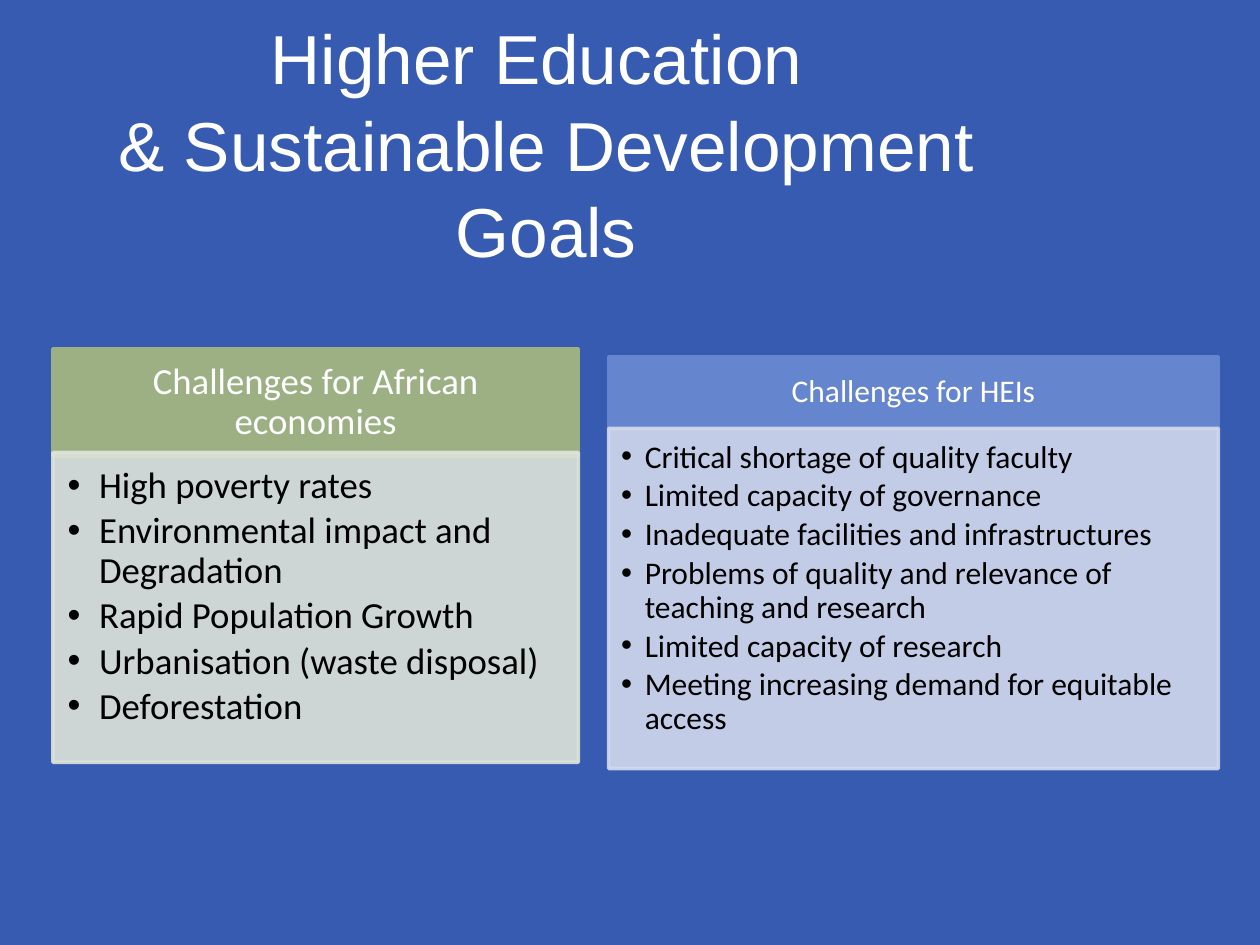
from lxml import etree
from pptx import Presentation
from pptx.dml.color import RGBColor
from pptx.enum.text import MSO_ANCHOR, MSO_AUTO_SIZE, PP_ALIGN
from pptx.oxml.ns import qn
from pptx.util import Inches, Pt

BLUE = RGBColor(0x37, 0x5B, 0xB0)
WHITE = RGBColor(0xFF, 0xFF, 0xFF)
BLACK = RGBColor(0x00, 0x00, 0x00)
GREEN = RGBColor(0x9C, 0xB0, 0x84)
PALE_GREEN = RGBColor(0xDE, 0xE4, 0xD9)
LIGHT_BLUE = RGBColor(0x65, 0x85, 0xCF)
PALE_BLUE = RGBColor(0xD3, 0xD9, 0xED)
CENTER = PP_ALIGN.CENTER
LEFT = PP_ALIGN.LEFT
MIDDLE = MSO_ANCHOR.MIDDLE
TOP = MSO_ANCHOR.TOP
NO_AUTOFIT = MSO_AUTO_SIZE.NONE
COMPARISON_LAYOUT = 4


class ComparisonSlide:
    """Places content by percentages of the slide's width and height."""

    title_font = "Arial"
    panel_font = "Calibri"

    def __init__(self, deck):
        self.deck = deck
        self.slide = deck.slides.add_slide(deck.slide_layouts[COMPARISON_LAYOUT])
        background = self.slide.background.fill
        background.solid()
        background.fore_color.rgb = BLUE

    def place(self, box, left, top, width, height):
        across = self.deck.slide_width / 100
        down = self.deck.slide_height / 100
        box.left, box.width = round(left * across), round(width * across)
        box.top, box.height = round(top * down), round(height * down)

    def paint(self, box, color, opacity=100):
        """Give the box one colour for its fill and its 2 pt line."""
        box.fill.solid()
        box.fill.fore_color.rgb = color
        box.line.color.rgb = color
        box.line.width = Pt(2)
        if opacity < 100:
            for node in box._element.spPr.iter(qn("a:srgbClr")):
                etree.SubElement(node, qn("a:alpha"), val=str(opacity * 1000))

    def set_text(self, box, lines, font, size, color, align, anchor, spacing, after=0):
        """Fill the box; after is the paragraph gap as a share of the text size."""
        frame = box.text_frame
        frame.text = "\n".join(lines)
        frame.word_wrap = True
        frame.auto_size = NO_AUTOFIT
        frame.vertical_anchor = anchor
        for para in frame.paragraphs:
            para.alignment = align
            para.line_spacing = spacing
            para.space_before = Pt(0)
            para.space_after = Pt(size * after)
            for span in para.runs:
                span.font.name = font
                span.font.size = Pt(size)
                span.font.bold = False
                span.font.color.rgb = color

    def inset(self, box, left, top, right, bottom):
        frame = box.text_frame
        frame.margin_left, frame.margin_top = Pt(left), Pt(top)
        frame.margin_right, frame.margin_bottom = Pt(right), Pt(bottom)

    def title(self, text, area):
        box = self.slide.shapes.title
        self.place(box, *area)
        self.set_text(box, [text], self.title_font, 39.6, WHITE, CENTER, MIDDLE, 1.04)

    def heading(self, index, text, area, color, size):
        box = self.slide.placeholders[index]
        self.place(box, *area)
        self.paint(box, color)
        self.set_text(box, [text], self.panel_font, size, WHITE, CENTER, MIDDLE, 0.9)
        side, end = size * 0.53, size * 0.3
        self.inset(box, side, end, side, end)

    def bullets(self, index, items, area, color, size, indent):
        box = self.slide.placeholders[index]
        self.place(box, *area)
        self.paint(box, color, opacity=90)
        self.set_text(box, items, self.panel_font, size, BLACK, LEFT, TOP, 0.9, after=0.15)
        self.inset(box, size * 0.4, size * 0.4, size * 0.53, size * 0.6)
        for para in box.text_frame.paragraphs:
            properties = para._p.get_or_add_pPr()
            properties.set("marL", str(Pt(indent)))
            properties.set("indent", str(-Pt(indent)))
            etree.SubElement(properties, qn("a:buChar"), char="•")


def main():
    deck = Presentation()
    deck.slide_width, deck.slide_height = Inches(10), Inches(7.5)
    page = ComparisonSlide(deck)
    page.title("Higher Education \v& Sustainable Development Goals",
               (5, 6.67, 76.7, 16.67))

    page.heading(1, "Challenges for African economies",
                 (4.2, 36.93, 41.7, 11.33), GREEN, 21)
    page.bullets(2, [
        "High poverty rates",
        "Environmental impact and Degradation",
        "Rapid Population Growth",
        "Urbanisation (waste disposal)",
        "Deforestation",
    ], (4.2, 47.87, 41.7, 32.8), PALE_GREEN, 21, indent=18)

    page.heading(3, "Challenges for HEIs",
                 (48.3, 37.73, 48.4, 7.6), LIGHT_BLUE, 18)
    page.bullets(4, [
        "Critical shortage of quality faculty",
        "Limited capacity of governance",
        "Inadequate facilities and infrastructures",
        "Problems of quality and relevance of teaching and research",
        "Limited capacity of research",
        "Meeting increasing demand for equitable access",
    ], (48.3, 45.33, 48.4, 36), PALE_BLUE, 18, indent=13.5)
    deck.save("out.pptx")


if __name__ == "__main__":
    main()
